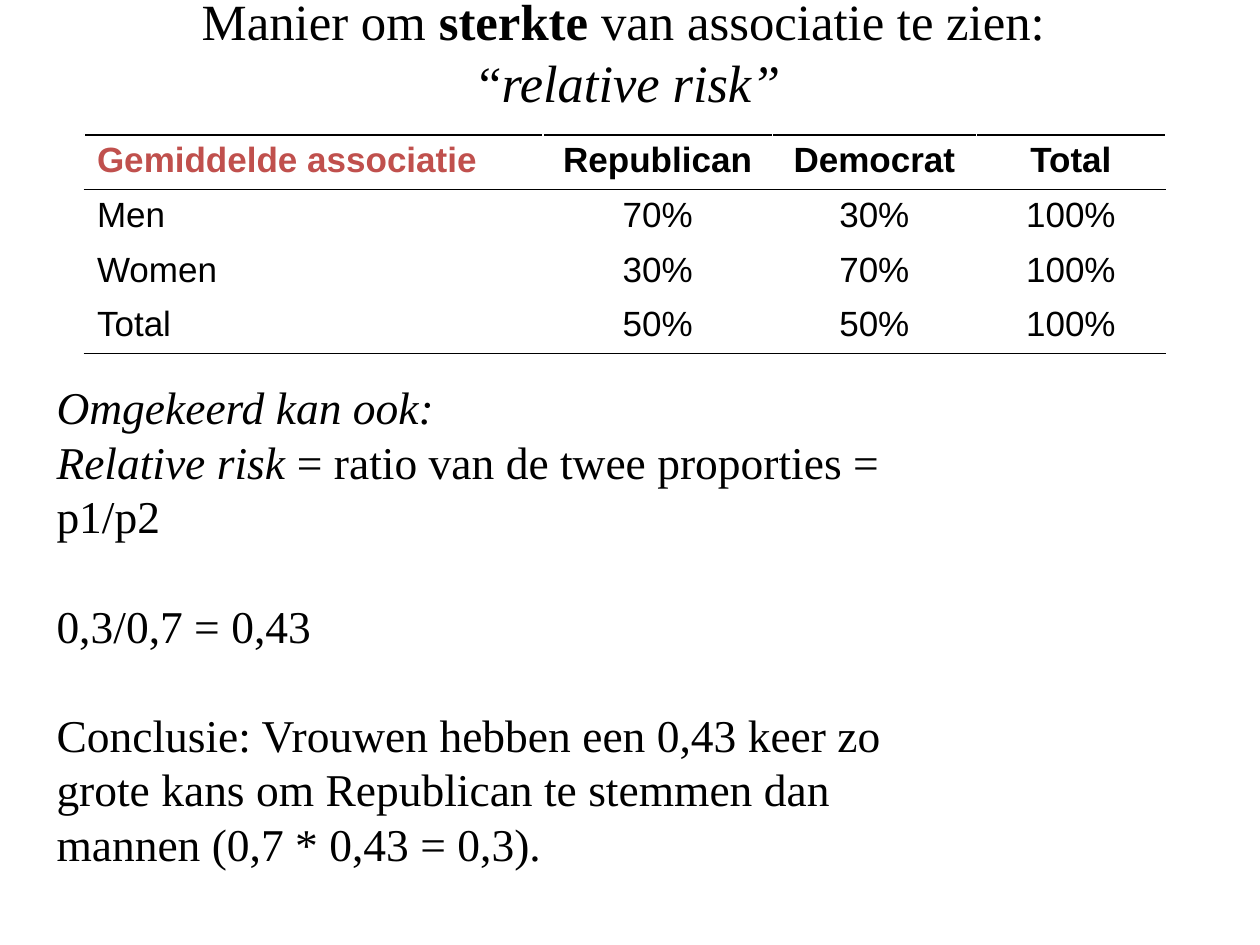
import pptx
import pptx.util
import pptx.dml.color
import pptx.enum.text
import pptx.oxml
import pptx.oxml.ns

Inches, Pt = pptx.util.Inches, pptx.util.Pt
ALIGN = pptx.enum.text.PP_ALIGN
ANCHOR = pptx.enum.text.MSO_ANCHOR

COLORS = {"text": "000000", "accent": "C0504D", "paper": "FFFFFF"}
SERIF, SANS = "Times New Roman", "Arial"

TITLE = [[
    ("Manier om ", 29, ""),
    ("sterkte", 29, "b"),
    (" van associatie te zien: \n“", 29, ""),
    ("relative risk”", 30, "i"),
]]
BODY = [
    [("Omgekeerd kan ook:\nRelative risk ", 26, "i"),
     ("= ratio van de twee proporties = p1/p2", 26, "")],
    [("0,3/0,7 = 0,43", 26, "")],
    [("Conclusie: Vrouwen hebben een 0,43 keer zo grote kans om "
      "Republican te stemmen dan mannen (0,7 * 0,43 = 0,3).", 26, "")],
]
ROWS = [
    ("Gemiddelde associatie", "Republican", "Democrat", "Total"),
    ("Men", "70%", "30%", "100%"),
    ("Women", "30%", "70%", "100%"),
    ("Total", "50%", "50%", "100%"),
]
WIDTHS = [3.64, 1.82, 1.62, 1.5]
HEIGHT = 0.43


def color(name):
    return pptx.dml.color.RGBColor.from_string(COLORS[name])


def add_run(par, text, size, style, face, tone="text"):
    for i, part in enumerate(text.split("\n")):
        if i:
            par.add_line_break()
        run = par.add_run()
        run.text = part
        font = run.font
        font.name, font.size = face, Pt(size)
        font.bold, font.italic = "b" in style, "i" in style
        font.color.rgb = color(tone)


def add_text(slide, box, pars, align, anchor, pitch):
    frame = slide.shapes.add_textbox(*map(Inches, box)).text_frame
    frame.word_wrap = True
    frame.vertical_anchor = anchor
    for i, runs in enumerate(pars):
        par = frame.add_paragraph() if i else frame.paragraphs[0]
        par.alignment = align
        par.line_spacing = Pt(pitch)
        par.space_before = Pt(pitch if i else 0)
        for text, size, style in runs:
            add_run(par, text, size, style, SERIF)


def set_edge(cell, side, tone):
    props = cell._tc.get_or_add_tcPr()
    space = pptx.oxml.ns.nsdecls("a")
    props.append(pptx.oxml.parse_xml(
        f'<a:ln{side} {space} w="{Pt(1)}"><a:solidFill>'
        f'<a:srgbClr val="{COLORS[tone]}"/></a:solidFill></a:ln{side}>'))


def add_grid(slide, left, top):
    grid = slide.shapes.add_table(
        len(ROWS), len(WIDTHS), Inches(left), Inches(top),
        Inches(sum(WIDTHS)), Inches(HEIGHT * len(ROWS))).table
    for col, width in zip(grid.columns, WIDTHS):
        col.width = Inches(width)
    last = len(ROWS) - 1
    for r, row in enumerate(ROWS):
        for c, text in enumerate(row):
            cell = grid.cell(r, c)
            par = cell.text_frame.paragraphs[0]
            par.alignment = ALIGN.CENTER if c else ALIGN.LEFT
            tone = "accent" if r == c == 0 else "text"
            add_run(par, text, 20, "" if r else "b", SANS, tone)
            edges = {"L": "paper", "R": "paper",
                     "T": "text" if r < 2 else "paper",
                     "B": "text" if r in (0, last) else "paper"}
            for side, tone in edges.items():
                set_edge(cell, side, tone)
            cell.fill.background()


def main():
    deck = pptx.Presentation()
    deck.slide_width, deck.slide_height = Inches(10), Inches(7.5)
    slide = deck.slides.add_slide(deck.slide_layouts[6])
    add_text(slide, (0, 0.21, 10, 0.39), TITLE, ALIGN.CENTER, ANCHOR.MIDDLE, 35.4)
    add_grid(slide, 0.67, 1.07)
    add_text(slide, (0.35, 2.96, 6.85, 4.51), BODY, ALIGN.LEFT, ANCHOR.TOP, 31.2)
    deck.save("out.pptx")


if __name__ == "__main__":
    main()
